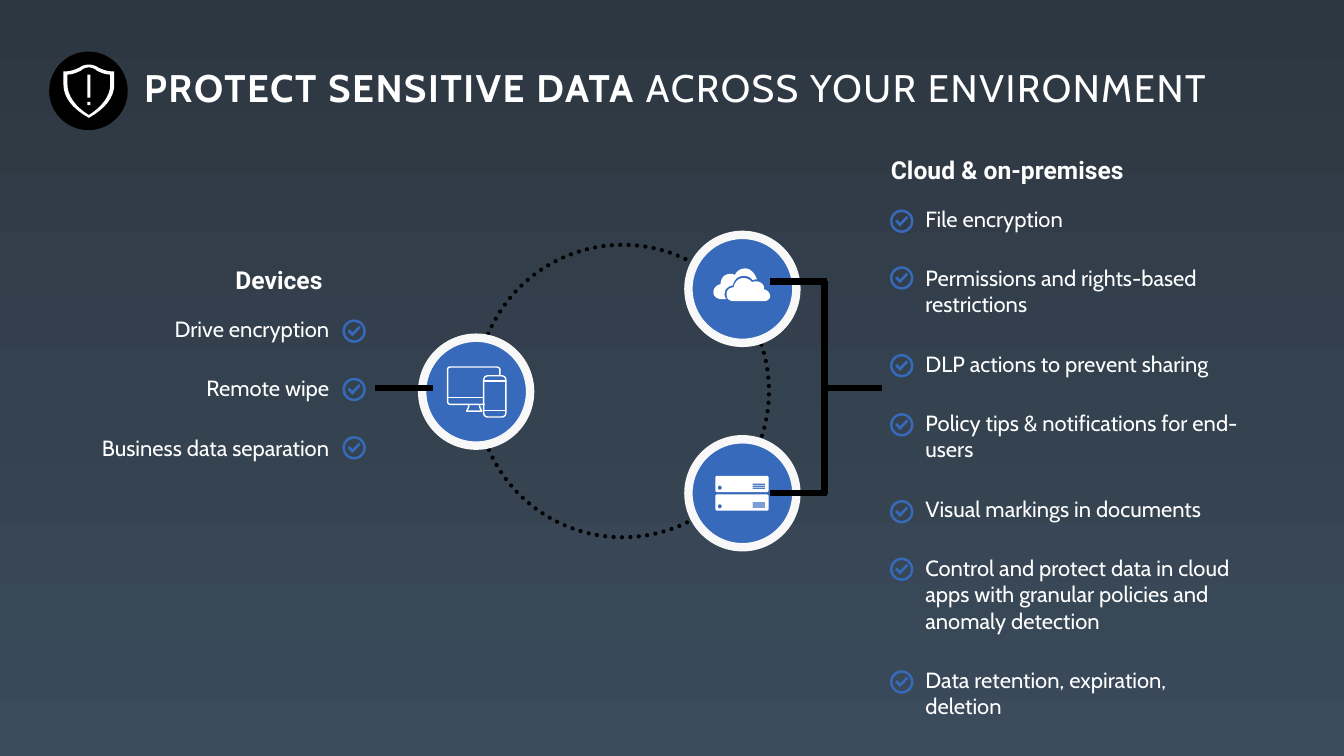
from lxml.etree import SubElement
from pptx import Presentation
from pptx.dml.color import RGBColor
from pptx.enum.dml import MSO_LINE
from pptx.enum.shapes import MSO_CONNECTOR, MSO_SHAPE as SHAPE
from pptx.enum.text import MSO_ANCHOR as ANCHOR, MSO_AUTO_SIZE, PP_ALIGN as ALIGN
from pptx.oxml.ns import qn
from pptx.util import Cm, Pt

COLORS = {
    "top": "2D3741", "bottom": "3B4B5B", "black": "000000",
    "white": "FFFFFF", "rim": "F8F8F8", "blue": "376ABB",
}


def add_text(p, text, size=15.7, font="Cabin", bold=False, spacing=0):
    r = p.add_run()
    r.text = text
    r.font.size = Pt(size)
    r.font.name = font
    r.font.bold = bold
    r.font.color.rgb = RGBColor.from_string(COLORS["white"])
    if spacing:
        r._r.get_or_add_rPr().set("spc", str(spacing))


def paint(shape, fill=None, line=None, width=1):
    if line:
        shape.line.color.rgb = RGBColor.from_string(COLORS[line])
        shape.line.width = Pt(width)
    else:
        shape.line.fill.background()
    shape.shadow.inherit = False
    if fill:
        shape.fill.solid()
        shape.fill.fore_color.rgb = RGBColor.from_string(COLORS[fill])
    elif hasattr(shape, "fill"):
        shape.fill.background()


prs = Presentation()
prs.slide_width, prs.slide_height = Cm(33.87), Cm(19.05)
s = prs.slides.add_slide(prs.slide_layouts.get_by_name("Comparison"))
bg = s.background.fill
bg.gradient()
bg.gradient_angle = 270
for stop, name in zip(bg.gradient_stops, ("top", "bottom")):
    stop.color.rgb = RGBColor.from_string(COLORS[name])

title = s.shapes.title
title.left, title.top, title.width, title.height = Cm(3.23), Cm(1.3), Cm(29.39), Cm(1.93)
tf = title.text_frame
tf.auto_size = MSO_AUTO_SIZE.NONE
tf.vertical_anchor = ANCHOR.MIDDLE
tf.margin_left, tf.margin_right = Cm(0.4), 0
tf.margin_top = tf.margin_bottom = Cm(0.25)
p = tf.paragraphs[0]
p.alignment = ALIGN.LEFT
p.line_spacing = 0.9
add_text(p, "PROTECT SENSITIVE DATA ", size=27.4, bold=True, spacing=120)
add_text(p, "ACROSS YOUR ENVIRONMENT", size=27.4, spacing=120)

heading = dict(size=17.6, font="Roboto", bold=True)
heading_margins = (0.25, 0.13, 0.25, 0.13)
bodies = [
    (1, (4.38, 6.55, 4, 1.02), heading_margins, ANCHOR.TOP, ALIGN.RIGHT, heading, ["Devices"]),
    (2, (0, 7.08, 9.45, 5.4), (0.5, 0.4, 1.15, 0.4), ANCHOR.MIDDLE, ALIGN.RIGHT, {},
     ["Drive encryption", "Remote wipe", "Business data separation"]),
    (3, (22.2, 3.78, 6.76, 1.02), heading_margins, ANCHOR.TOP, ALIGN.LEFT, heading,
     ["Cloud & on-premises"]),
    (4, (22.2, 5.87, 9.7, 11.56), (1.12, 0.4, 0.5, 0.4), ANCHOR.MIDDLE, ALIGN.LEFT, {},
     ["File encryption", "Permissions and rights-based restrictions",
      "DLP actions to prevent sharing", "Policy tips & notifications for end-users",
      "Visual markings in documents",
      "Control and protect data in cloud apps with granular policies and anomaly detection",
      "Data retention, expiration, deletion"]),
]
for idx, box, margins, anchor, align, fmt, lines in bodies:
    sp = s.placeholders[idx]
    sp.left, sp.top, sp.width, sp.height = map(Cm, box)
    tf = sp.text_frame
    tf.word_wrap = True
    tf.auto_size = MSO_AUTO_SIZE.NONE
    tf.vertical_anchor = anchor
    tf.margin_left, tf.margin_top, tf.margin_right, tf.margin_bottom = map(Cm, margins)
    for i, text in enumerate(lines):
        p = tf.add_paragraph() if i else tf.paragraphs[0]
        pPr = p._p.get_or_add_pPr()
        pPr.set("marL", "0")
        pPr.set("indent", "0")
        SubElement(pPr, qn("a:buNone"))
        p.alignment = align
        p.space_before = Pt(0)
        p.space_after = Pt(23.5)
        add_text(p, text, **fmt)
devices_list = s.placeholders[2]

ring = s.shapes.add_shape(SHAPE.OVAL, Cm(12.01), Cm(6.17), Cm(7.37), Cm(7.37))
paint(ring, line="black", width=3)
ring.line.dash_style = MSO_LINE.ROUND_DOT
ring._element.spPr.find(qn("a:ln")).set("cap", "rnd")

presets = [
    (SHAPE.OVAL, (1.24, 1.3, 1.98, 1.98), dict(fill="black")),
    (SHAPE.RECTANGLE, (2.2, 2.57, 0.08, 0.08), dict(fill="white")),
    (SHAPE.RECTANGLE, (2.2, 1.88, 0.08, 0.58), dict(fill="white")),
]
for x, y in [(17.35, 11.07), (17.35, 5.92), (10.64, 8.51)]:
    presets.append((SHAPE.OVAL, (x, y, 2.72, 2.72), dict(fill="blue", line="rim", width=6)))
presets.append((SHAPE.ROUNDED_RECTANGLE, (12.19, 9.47, 0.56, 1.04), dict(line="white")))

shield = [
    [(2.24, 2.97), (1.83, 2.74, 1.6, 2.46, 1.6, 2.13), (1.6, 1.8), (1.65, 1.8),
     (1.78, 1.8, 1.91, 1.75, 2.01, 1.7), (2.08, 1.65, 2.16, 1.63, 2.24, 1.63),
     (2.32, 1.63, 2.4, 1.65, 2.47, 1.7), (2.57, 1.75, 2.7, 1.8, 2.83, 1.8),
     (2.88, 1.8), (2.88, 2.13), (2.88, 2.46, 2.65, 2.74, 2.24, 2.97)],
    [(1.7, 1.88), (1.7, 2.13), (1.7, 2.41, 1.9, 2.69, 2.24, 2.9),
     (2.58, 2.69, 2.78, 2.41, 2.78, 2.13), (2.78, 1.88),
     (2.64, 1.88, 2.54, 1.83, 2.44, 1.78), (2.39, 1.73, 2.31, 1.7, 2.24, 1.7),
     (2.17, 1.7, 2.09, 1.73, 2.04, 1.78), (1.94, 1.83, 1.83, 1.88, 1.7, 1.88)],
]
clouds = [
    [(19.25, 7.29), (19.25, 7.29, 19.41, 7.32, 19.41, 7.47),
     (19.41, 7.52, 19.35, 7.59, 19.25, 7.59), (18.52, 7.59),
     (18.36, 7.59, 18.31, 7.52, 18.31, 7.42), (18.31, 7.24, 18.49, 7.24, 18.49, 7.24),
     (18.49, 7.24, 18.52, 7.04, 18.69, 7.01), (18.82, 6.99, 18.92, 7.06, 18.95, 7.11),
     (18.95, 7.11, 19.05, 7.06, 19.15, 7.11), (19.2, 7.14, 19.28, 7.19, 19.25, 7.29)],
    [(18.26, 7.42), (18.26, 7.21, 18.47, 7.19, 18.47, 7.19),
     (18.47, 7.19, 18.49, 7.01, 18.67, 6.96), (18.82, 6.93, 18.92, 6.99, 18.97, 7.06),
     (18.97, 7.06, 19, 7.04, 19.08, 7.04), (19.05, 6.99, 19.02, 6.86, 18.87, 6.78),
     (18.72, 6.73, 18.57, 6.81, 18.52, 6.93), (18.52, 6.93, 18.42, 6.86, 18.29, 6.93),
     (18.21, 6.96, 18.16, 7.06, 18.16, 7.16), (18.16, 7.16, 17.98, 7.19, 17.98, 7.37),
     (17.98, 7.47, 18.08, 7.54, 18.19, 7.54), (18.31, 7.54),
     (18.26, 7.49, 18.26, 7.44, 18.26, 7.42)],
]
stand = [[(12.09, 10.19), (12.09, 10.26), (12.14, 10.36), (11.76, 10.36),
          (11.81, 10.26), (11.81, 10.19)]]
monitor = [[(12.22, 10.19), (11.35, 10.19), (11.3, 10.19, 11.28, 10.15, 11.28, 10.11),
            (11.28, 9.32), (11.28, 9.28, 11.3, 9.25, 11.35, 9.25), (12.52, 9.25),
            (12.57, 9.25, 12.6, 9.28, 12.6, 9.32), (12.6, 9.47)]]
outlines = [(shield, "white"), (clouds, "white"), (stand, None), (monitor, None)]

for y in (11.99, 12.46):
    b = y + 0.41
    server = [
        [(18.08, y), (19.32, y), (19.35, y, 19.37, y + 0.02, 19.37, y + 0.05),
         (19.37, b - 0.05), (19.37, b - 0.02, 19.35, b, 19.32, b), (18.08, b),
         (18.05, b, 18.03, b - 0.02, 18.03, b - 0.05), (18.03, y + 0.05),
         (18.03, y + 0.02, 18.05, y, 18.08, y)],
        [(18.09, y + 0.3), (18.09, y + 0.23, 18.19, y + 0.23, 18.19, y + 0.3),
         (18.19, y + 0.37, 18.09, y + 0.37, 18.09, y + 0.3)],
    ]
    for slot in (y + 0.2, y + 0.25, y + 0.3):
        server.append([(18.97, slot), (19.28, slot), (19.28, slot + 0.03), (18.97, slot + 0.03)])
    outlines.append((server, "white"))

check = [(0.25, 0.43), (0.13, 0.3), (0.18, 0.25), (0.25, 0.33), (0.42, 0.16), (0.46, 0.21)]
cloud_checks = [(22.43, y) for y in (5.28, 6.71, 8.92, 10.41, 12.6, 14.05, 16.89)]
device_checks = [(8.63, 8.05 + 1.47 * i) for i in range(3)]
for x, y in cloud_checks + device_checks:
    presets.append((SHAPE.DONUT, (x, y, 0.59, 0.59), dict(fill="blue")))
    outlines.append(([[(x + dx, y + dy) for dx, dy in check]], "blue"))

for kind, box, style in presets:
    sp = s.shapes.add_shape(kind, *map(Cm, box))
    paint(sp, **style)
    if kind == SHAPE.DONUT:
        sp.adjustments[0] = 0.1
    elif kind == SHAPE.ROUNDED_RECTANGLE:
        sp.adjustments[0] = 0.18

for contours, fill in outlines:
    builder = None
    for contour in contours:
        points = [contour[0]]
        for step in contour[1:]:
            if len(step) == 2:
                points.append(step)
                continue
            x0, y0 = points[-1]
            x1, y1, x2, y2, x3, y3 = step
            for t in (i / 8 for i in range(1, 9)):
                u = 1 - t
                points.append((u**3 * x0 + 3 * u * u * t * x1 + 3 * u * t * t * x2 + t**3 * x3,
                               u**3 * y0 + 3 * u * u * t * y1 + 3 * u * t * t * y2 + t**3 * y3))
        points = [(Cm(x), Cm(y)) for x, y in points]
        if builder is None:
            builder = s.shapes.build_freeform(*points[0])
        else:
            builder.move_to(*points[0])
        builder.add_line_segments(points[1:], close=bool(fill))
    paint(builder.convert_to_shape(), fill=fill, line=None if fill else "white")

connectors = [
    (11.28, 10.01, 12.19, 10.01, "white", 1),
    (12.19, 10.34, 12.75, 10.34, "white", 1),
    (12.19, 9.6, 12.75, 9.6, "white", 1),
    (20.85, 7.09, 19.41, 7.09, "black", 4.5),
    (20.85, 12.42, 19.41, 12.42, "black", 4.5),
    (20.78, 12.45, 20.78, 7.09, "black", 4.5),
    (22.23, 9.78, 20.78, 9.78, "black", 4.5),
    (9.45, 9.78, 10.9, 9.78, "black", 4.5),
]
for *ends, color, width in connectors:
    link = s.shapes.add_connector(MSO_CONNECTOR.STRAIGHT, *map(Cm, ends))
    paint(link, line=color, width=width)
link.begin_connect(devices_list, 3)

prs.save("out.pptx")
